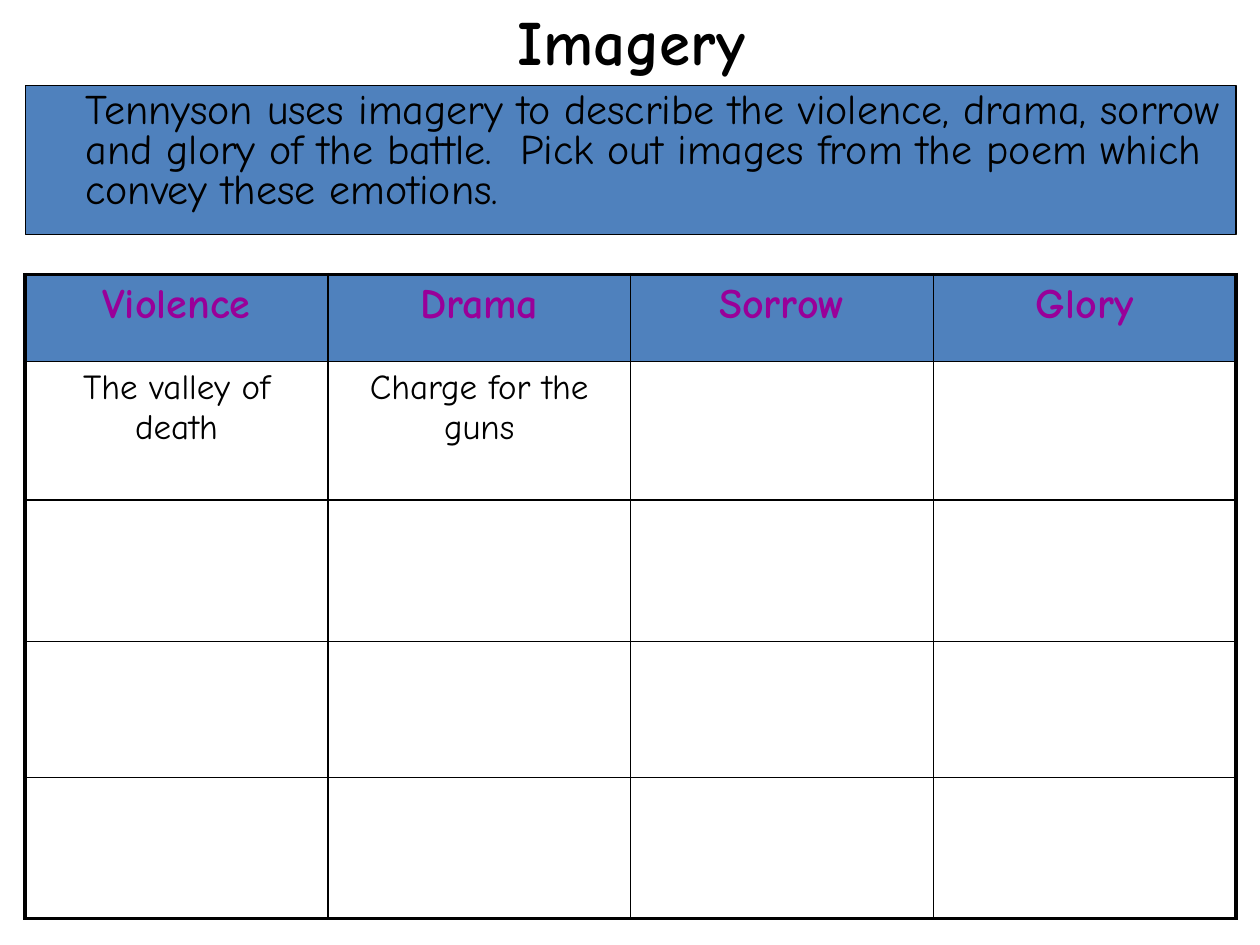
import pptx
import pptx.dml.color
import pptx.enum.shapes
import pptx.enum.text
import pptx.oxml
import pptx.oxml.ns
import pptx.util
from pptx.util import Inches

COLORS = {"ink": "000000", "panel": "4F81BD", "heading": "990099"}
FONT = "Comic Neue"
ALIGN = pptx.enum.text.PP_ALIGN
ANCHOR = pptx.enum.text.MSO_ANCHOR


def rgb(name):
    return pptx.dml.color.RGBColor.from_string(COLORS[name])


def write(frame, text, size=20, color="ink", bold=False, align=ALIGN.CENTER,
          anchor=ANCHOR.TOP, before=0, spacing=None):
    frame.word_wrap = True
    frame.vertical_anchor = anchor
    paragraph = frame.paragraphs[0]
    paragraph.alignment = align
    paragraph.space_before = pptx.util.Pt(before)
    paragraph.line_spacing = spacing
    run = paragraph.add_run()
    run.text = text
    run.font.name = FONT
    run.font.size = pptx.util.Pt(size)
    run.font.bold = bold
    run.font.color.rgb = rgb(color)
    return paragraph


deck = pptx.Presentation()
deck.slide_width, deck.slide_height = Inches(10), Inches(7.5)
slide = deck.slides.add_slide(deck.slide_layouts[5])

title = slide.shapes.title
title.left, title.top = Inches(0.51), Inches(0.05)
title.width, title.height = Inches(9), Inches(0.54)
write(title.text_frame, "Imagery", size=36, bold=True, anchor=ANCHOR.MIDDLE)

task = slide.shapes.add_shape(pptx.enum.shapes.MSO_SHAPE.RECTANGLE,
                              Inches(0.2), Inches(0.68), Inches(9.61), Inches(1.18))
task.shadow.inherit = False
task.fill.solid()
task.fill.fore_color.rgb = rgb("panel")
task.line.color.rgb = rgb("ink")
task.line.width = pptx.util.Pt(0.75)
instruction = write(
    task.text_frame,
    "Tennyson uses imagery to describe the violence, drama, sorrow and glory of the battle.  "
    "Pick out images from the poem which convey these emotions.",
    size=24, align=ALIGN.LEFT, before=4.8, spacing=0.8)
instruction._p.get_or_add_pPr().set("marL", str(Inches(0.38)))

rows = [
    ["Violence", "Drama", "Sorrow", "Glory"],
    ["The valley of death", "Charge for the guns", "", ""],
    [""] * 4,
    [""] * 4,
    [""] * 4,
]
heights = [0.69, 1.1, 1.12, 1.08, 1.12]
emotions = slide.shapes.add_table(len(rows), 4, Inches(0.2), Inches(2.18),
                                  Inches(9.61), Inches(sum(heights))).table
emotions.first_row = emotions.horz_banding = False

for r, (texts, height) in enumerate(zip(rows, heights)):
    emotions.rows[r].height = Inches(height)
    for c, text in enumerate(texts):
        cell = emotions.cell(r, c)
        if r == 0:
            cell.fill.solid()
            cell.fill.fore_color.rgb = rgb("panel")
            write(cell.text_frame, text, size=24, color="heading", bold=True, before=4.8)
        else:
            cell.fill.background()
            if text:
                write(cell.text_frame, text, before=4)
        outer_edges = {"L": c == 0, "R": c == 3, "T": r == 0, "B": r == len(rows) - 1}
        for position, (side, outer) in enumerate(outer_edges.items()):
            border = pptx.oxml.parse_xml(
                f'<a:ln{side} {pptx.oxml.ns.nsdecls("a")} w="{pptx.util.Pt(2.25 if outer else 1)}">'
                f'<a:solidFill><a:srgbClr val="{COLORS["ink"]}"/></a:solidFill></a:ln{side}>')
            cell._tc.get_or_add_tcPr().insert(position, border)

deck.save("out.pptx")
